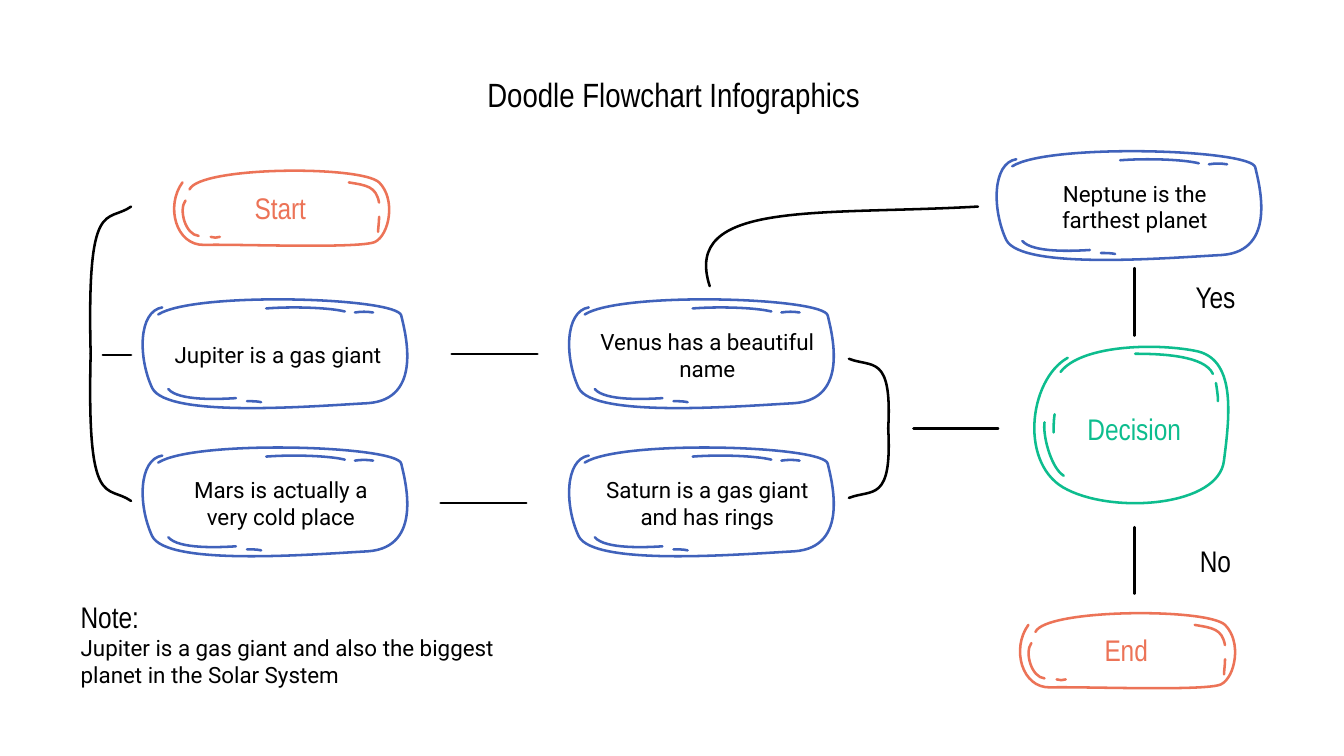
from lxml import etree
from pptx import Presentation
from pptx.dml.color import RGBColor
from pptx.enum.shapes import MSO_CONNECTOR
from pptx.enum.text import MSO_ANCHOR, PP_ALIGN
from pptx.oxml.ns import qn
from pptx.util import Inches, Pt

BLUE = RGBColor(0x40, 0x62, 0xBB)
CORAL = RGBColor(0xEC, 0x73, 0x57)
GREEN = RGBColor(0x0D, 0xBD, 0x8E)
BLACK = RGBColor(0, 0, 0)
CENTER, LEFT = PP_ALIGN.CENTER, PP_ALIGN.LEFT
MIDDLE = MSO_ANCHOR.MIDDLE
STRAIGHT = MSO_CONNECTOR.STRAIGHT
HEAD, BODY = ("Arial Narrow", 21.3), ("Roboto", 16)
STROKE = Pt(1.82)

# Content: process boxes by grid column and row
TITLE = "Doodle Flowchart Infographics"
STEPS = [
    ("Jupiter is a gas giant ", 0, 1),
    ("Mars is actually a very cold place", 0, 2),
    ("Venus has a beautiful name", 1, 1),
    ("Saturn is a gas giant and has rings", 1, 2),
    ("Neptune is the farthest planet", 2, 0),
]
COLUMNS = (1.37, 5.6, 9.84)
GRID_TOP, ROW_STEP = 1.42, 1.47
LABELS = [
    ("Yes", (11.48, 2.76, 1.15, 0.36), HEAD, CENTER),
    ("No", (11.48, 5.38, 1.15, 0.36), HEAD, CENTER),
    ("Note:", (0.67, 5.89, 4.62, 0.45), HEAD, LEFT),
    ("Jupiter is a gas giant and also the biggest planet in the Solar System",
     (0.67, 6.22, 4.62, 0.67), BODY, LEFT),
]

# Doodles: Bezier strokes from the box corner, then the text area
PROCESS = ([
    [(0.24, 0.16), (0, 0.2), (0, 0.66), (0.14, 0.96), (0.29, 1.26), (1.73, 1.14),
     (2.28, 1.11), (2.83, 1.07), (2.65, 0.41), (2.61, 0.24), (2.57, 0.06),
     (0.56, 0), (0.2, 0.23)],
    [(1.27, 0.17), (1.52, 0.15), (1.89, 0.16), (2.05, 0.2)],
    [(2.15, 0.21), (2.21, 0.2), (2.27, 0.2), (2.33, 0.21)],
    [(0.3, 0.97), (0.4, 1.09), (0.81, 1.07), (0.97, 1.06)],
    [(1.08, 1.09), (1.13, 1.09), (1.18, 1.09), (1.22, 1.1)],
], (0.22, 0.21, 2.39, 0.84))
TERMINAL = ([
    [(0.17, 0.17), (0, 0.4), (0.1, 0.8), (0.39, 0.79), (0.68, 0.78), (1.93, 0.83),
     (2.08, 0.76), (2.22, 0.69), (2.29, 0.34), (2.12, 0.17), (1.94, 0),
     (0.34, 0.01), (0.24, 0.24)],
    [(0.2, 0.35), (0.13, 0.44), (0.2, 0.69), (0.33, 0.7)],
    [(0.45, 0.71), (0.48, 0.72), (0.51, 0.72), (0.54, 0.71)],
    [(1.82, 0.17), (2, 0.2), (2.09, 0.21), (2.12, 0.37)],
    [(2.12, 0.51), (2.12, 0.57), (2.11, 0.62), (2.11, 0.66)],
], (0.23, 0.13, 1.82, 0.57))
DECISION = ([
    [(0.49, 0.15), (0.1, 0.37), (0, 1.23), (0.49, 1.46), (0.97, 1.7), (1.99, 1.62),
     (2.04, 1.17), (2.1, 0.71), (2.16, 0.15), (1.75, 0.08), (1.33, 0),
     (0.62, 0.03), (0.42, 0.29)],
    [(1.16, 0.11), (1.43, 0.11), (1.85, 0.13), (1.93, 0.31)],
    [(1.96, 0.4), (1.97, 0.46), (1.98, 0.52), (1.98, 0.58)],
    [(0.26, 0.79), (0.24, 0.91), (0.32, 1.24), (0.45, 1.32)],
    [(0.36, 0.71), (0.35, 0.77), (0.35, 0.83), (0.35, 0.89)],
], (0.32, 0.59, 1.66, 0.52))

# Links: brackets mirror about a horizontal axis
BRACKETS = [
    (3.51, [(0.9, 0), (0.86, 1.58), (1.06, 1.29), (1.3, 1.46)]),
    (4.25, [(8.81, 0), (8.85, 0.74), (8.65, 0.6), (8.42, 0.69)]),
]
VENUS_TO_NEPTUNE = [(7.04, 2.84), (6.76, 1.98), (8.13, 2.14), (9.7, 2.05)]
LINES = [
    (1.02, 3.52, 1.3, 3.52), (4.48, 3.51, 5.33, 3.51), (4.37, 4.99, 5.22, 4.99),
    (9.06, 4.25, 9.9, 4.25), (11.25, 2.66, 11.25, 3.33), (11.25, 5.23, 11.25, 5.89),
]


def format_line(shape, color):
    shape.line.color.rgb = color
    shape.line.width = STROKE
    shape._element.spPr.get_or_add_ln().set("cap", "rnd")


def add_curve(shapes, points, color, x=0, y=0):
    pts = [(Inches(x + px), Inches(y + py)) for px, py in points]
    builder = shapes.build_freeform(*pts[0])
    builder.add_line_segments(pts[1:], close=False)
    sp = builder.convert_to_shape()
    # Every three line segments become one cubic Bezier
    segments = sp._element.xpath(".//a:lnTo")
    for i in range(0, len(segments), 3):
        bezier = etree.Element(qn("a:cubicBezTo"))
        segments[i].addprevious(bezier)
        for segment in segments[i:i + 3]:
            bezier.append(segment[0])
            segment.getparent().remove(segment)
    sp.fill.background()
    sp.shadow.inherit = False
    format_line(sp, color)


def set_text(shape, text, font, color, align):
    tf = shape.text_frame
    tf.word_wrap = True
    tf.vertical_anchor = MIDDLE
    tf.margin_left = tf.margin_right = tf.margin_top = tf.margin_bottom = Inches(0.13)
    p = tf.paragraphs[0]
    p.alignment = align
    r = p.add_run()
    r.text = text
    r.font.name, r.font.size = font[0], Pt(font[1])
    r.font.color.rgb = color


def add_text(shapes, text, box, font, color, align=CENTER):
    set_text(shapes.add_textbox(*map(Inches, box)), text, font, color, align)


def add_doodle(shapes, doodle, x, y, text, font, line_color, text_color):
    strokes, (dx, dy, w, h) = doodle
    for points in strokes:
        add_curve(shapes, points, line_color, x, y)
    add_text(shapes, text, (x + dx, y + dy, w, h), font, text_color)


def main():
    prs = Presentation()
    prs.slide_width, prs.slide_height = Inches(13.33), Inches(7.5)
    s = prs.slides.add_slide(prs.slide_layouts[5])

    # Title
    title = s.shapes.title
    title.left, title.top, title.width, title.height = map(Inches, (0.67, 0.6, 12, 0.67))
    set_text(title, TITLE, ("Arial Narrow", 24), BLACK, CENTER)
    title.text_frame.margin_right = Inches(0.11)

    # Boxes
    for text, col, row in STEPS:
        add_doodle(s.shapes, PROCESS, COLUMNS[col], GRID_TOP + row * ROW_STEP,
                   text, BODY, BLUE, BLACK)
    add_doodle(s.shapes, TERMINAL, 1.64, 1.64, "Start", HEAD, CORAL, CORAL)
    add_doodle(s.shapes, DECISION, 10.1, 3.4, "Decision", HEAD, GREEN, GREEN)
    add_doodle(s.shapes, TERMINAL, 10.03, 6.03, "End", HEAD, CORAL, CORAL)

    # Links
    for axis, half in BRACKETS:
        for side in (1, -1):
            add_curve(s.shapes, [(px, axis + side * py) for px, py in half], BLACK)
    add_curve(s.shapes, VENUS_TO_NEPTUNE, BLACK)
    for ends in LINES:
        link = s.shapes.add_connector(STRAIGHT, *map(Inches, ends))
        format_line(link, BLACK)
        etree.SubElement(link._element.spPr, qn("a:effectLst"))

    # Labels and note
    for text, box, font, align in LABELS:
        add_text(s.shapes, text, box, font, BLACK, align)

    prs.save("out.pptx")


if __name__ == "__main__":
    main()
